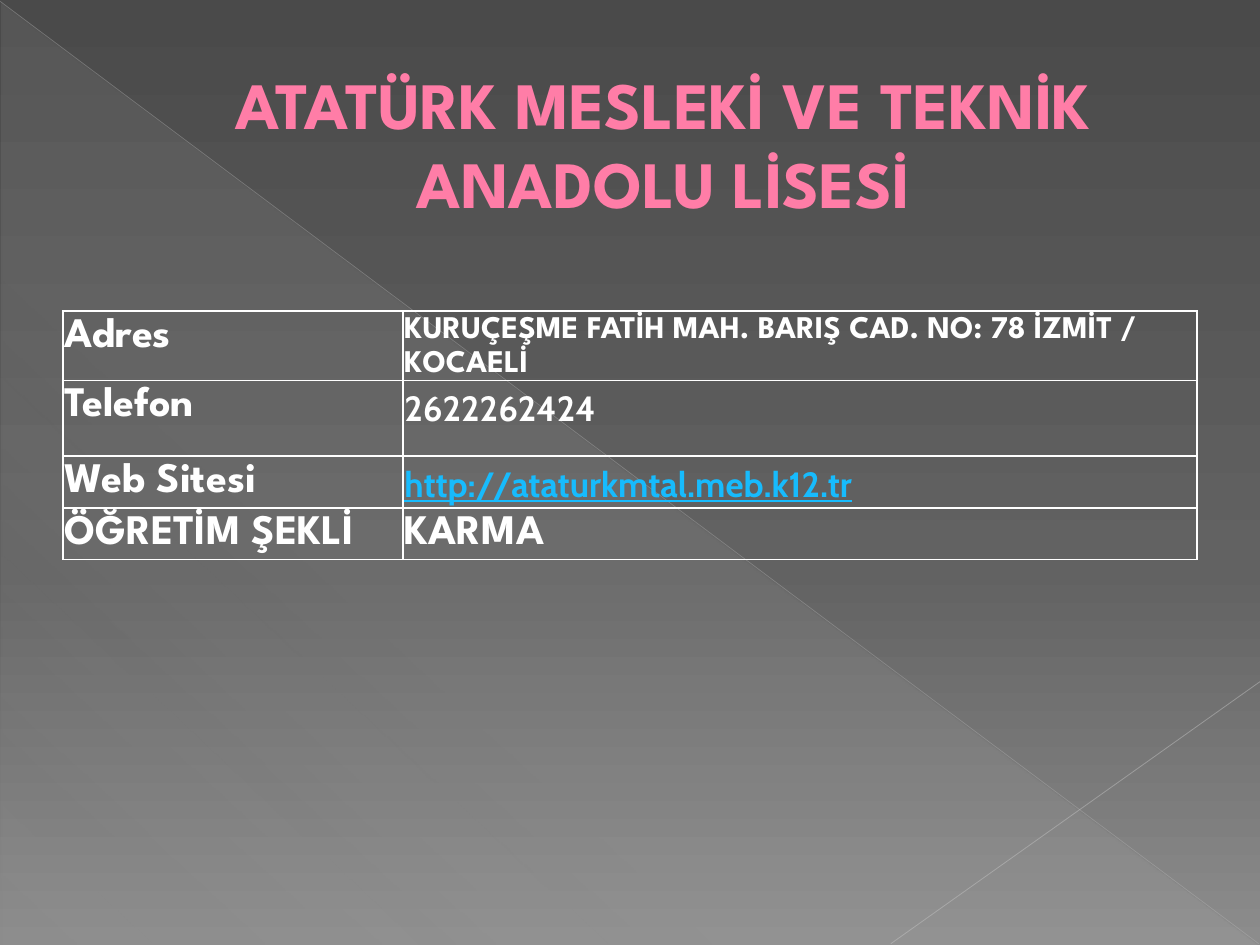
from pptx import Presentation
from pptx.dml.color import RGBColor
from pptx.enum import shapes, text
from pptx.oxml import parse_xml
from pptx.oxml.ns import nsdecls, qn
from pptx.util import Inches, Pt

WHITE = RGBColor(0xFF, 0xFF, 0xFF)
PINK = RGBColor(0xFF, 0x7D, 0xA7)
PLUM = RGBColor(0xB1, 0x27, 0x61)
SKY = RGBColor(0x17, 0xBB, 0xFD)
PALE = RGBColor(0xD2, 0xD2, 0xD2)
SILVER = RGBColor(0xBF, 0xBF, 0xBF)
ASH = RGBColor(0xC6, 0xC6, 0xC6)
DARK = RGBColor(0x4A, 0x4A, 0x4A)
MID = RGBColor(0x62, 0x62, 0x62)
LIGHT = RGBColor(0x8C, 0x8C, 0x8C)

HEAD = "League Spartan"
BODY = "Cabin"

# Label, value, format of the value, space after both
ROWS = [
    ("Adres", "KURUÇEŞME FATİH MAH. BARIŞ CAD. NO: 78 İZMİT / KOCAELİ",
     dict(size=18), 10),
    ("Telefon", "2622262424", dict(size=20, font=BODY), 10),
    ("Web Sitesi", "http://ataturkmtal.meb.k12.tr",
     dict(size=20, font=BODY, color=SKY, line=True), 10),
    ("ÖĞRETİM ŞEKLİ", "KARMA", {}, 0),
]
WIDTHS = [2.7, 6.3]
HEIGHTS = [0.55, 0.6, 0.41, 0.41]


def tint(color, alpha=100):
    return (f'<a:srgbClr val="{color}">'
            f'<a:alpha val="{alpha * 1000}"/></a:srgbClr>')


def blend(fill, stops, angle):
    """Swap a solid fill element for a gradient of (place, colour, alpha)."""
    marks = "".join(f'<a:gs pos="{place * 1000}">{tint(color, alpha)}</a:gs>'
                    for place, color, alpha in stops)
    grad = parse_xml(f'<a:gradFill {nsdecls("a")} rotWithShape="1">'
                     f'<a:gsLst>{marks}</a:gsLst>'
                     f'<a:lin ang="{angle * 60000}" scaled="0"/></a:gradFill>')
    fill.getparent().replace(fill, grad)


def stroke(tag, color, width, alpha=100):
    return parse_xml(f'<a:{tag} {nsdecls("a")} w="{Pt(width)}"><a:solidFill>'
                     f'{tint(color, alpha)}</a:solidFill></a:{tag}>')


def write(frame, words, size=24, font=HEAD, color=WHITE, line=False,
          align=text.PP_ALIGN.LEFT, space=1.0, after=0):
    para = frame.paragraphs[0]
    para.alignment = align
    para.line_spacing = space
    para.space_after = Pt(after)
    run = para.add_run()
    run.text = words
    run.font.name = font
    run.font.size = Pt(size)
    run.font.bold = True
    run.font.underline = line
    run.font.color.rgb = color
    return run


def add_line(slide, start, end, color, width, alpha):
    line = slide.shapes.add_connector(
        shapes.MSO_CONNECTOR.STRAIGHT, *map(Inches, start + end))
    props = line._element.spPr
    props.append(stroke("ln", color, width, alpha))
    props.append(parse_xml(f'<a:effectLst {nsdecls("a")}/>'))


def add_backdrop(slide):
    slide.background.fill.solid()
    solid = next(slide.background._cSld.iter(qn("a:solidFill")))
    blend(solid, [(0, DARK, 100), (60, MID, 100), (100, LIGHT, 100)], 90)

    wedge = slide.shapes.add_shape(
        shapes.MSO_SHAPE.RIGHT_TRIANGLE,
        *map(Inches, (0.01, 0.02, 9.98, 7.48)))
    wedge.shadow.inherit = False
    wedge.line.fill.background()
    wedge.fill.solid()
    blend(wedge._element.spPr.find(qn("a:solidFill")),
          [(0, PALE, 10), (70, PALE, 8), (100, PALE, 1)], 133)

    add_line(slide, (0, 0.01), (9.99, 7.49), SILVER, 0.39, 35)
    add_line(slide, (10, 5.41), (7.07, 7.49), ASH, 0.47, 45)


def add_title(slide):
    title = slide.shapes.title
    slide.shapes._spTree.append(title._element)  # in front of the backdrop
    title.left, title.top, title.width, title.height = map(
        Inches, (0.5, 0.49, 9, 1.28))
    frame = title.text_frame
    frame.word_wrap = True
    frame.auto_size = text.MSO_AUTO_SIZE.NONE
    frame.vertical_anchor = text.MSO_ANCHOR.MIDDLE
    run = write(frame, "ATATÜRK MESLEKİ VE TEKNİK ANADOLU LİSESİ",
                size=37.8, color=PINK, align=text.PP_ALIGN.CENTER)
    run.font._element.insert(0, stroke("ln", PLUM, 0.5))
    props = frame.paragraphs[0]._p.get_or_add_pPr()
    props.set("marL", str(Inches(0.53)))
    props.set("indent", "0")


def fill_cell(cell, words, **style):
    cell.margin_left = cell.margin_right = Inches(0.01)
    cell.margin_top = cell.margin_bottom = Inches(0.01)
    write(cell.text_frame, words, space=1.15, **style)
    props = cell._tc.get_or_add_tcPr()
    for side in ("lnL", "lnR", "lnT", "lnB"):
        props.append(stroke(side, WHITE, 1))
    cell.fill.background()


def add_contacts(slide):
    table = slide.shapes.add_table(
        len(ROWS), len(WIDTHS), Inches(0.5), Inches(2.47),
        Inches(sum(WIDTHS)), Inches(sum(HEIGHTS))).table
    table.first_row = table.horz_banding = False
    for col, width in zip(table.columns, WIDTHS):
        col.width = Inches(width)
    for i, (label, value, style, after) in enumerate(ROWS):
        table.rows[i].height = Inches(HEIGHTS[i])
        fill_cell(table.cell(i, 0), label, after=after)
        fill_cell(table.cell(i, 1), value, after=after, **style)


def main():
    deck = Presentation()
    deck.slide_width, deck.slide_height = Inches(10), Inches(7.5)
    slide = deck.slides.add_slide(deck.slide_layouts[5])
    add_backdrop(slide)
    add_title(slide)
    add_contacts(slide)
    deck.save("out.pptx")


if __name__ == "__main__":
    main()
